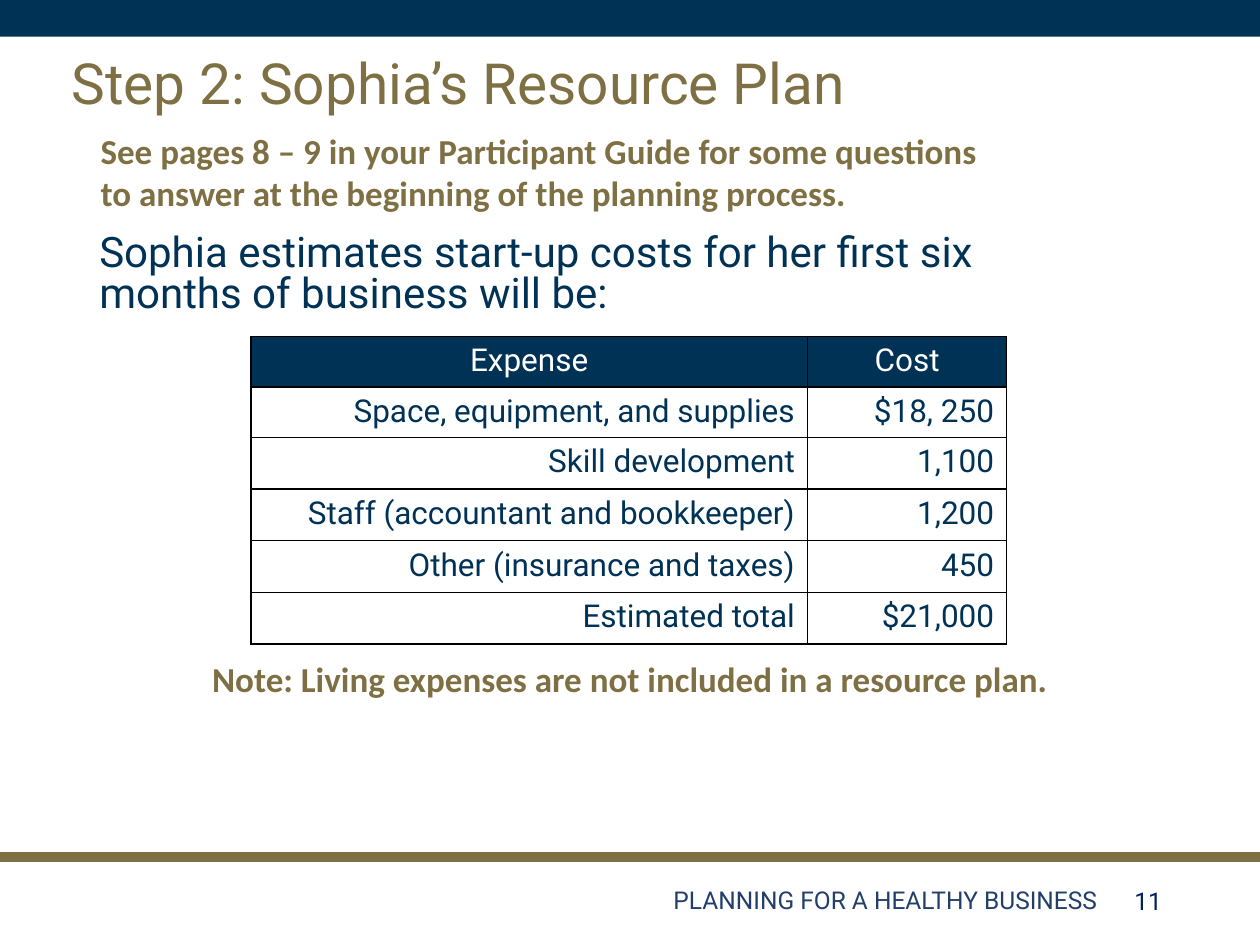
from lxml import etree
from pptx import Presentation
from pptx.dml.color import RGBColor
from pptx.enum.shapes import MSO_CONNECTOR, MSO_SHAPE
from pptx.enum.text import MSO_ANCHOR, PP_ALIGN
from pptx.oxml.ns import qn
from pptx.util import Inches, Pt

LEFT, CENTER, RIGHT = PP_ALIGN.LEFT, PP_ALIGN.CENTER, PP_ALIGN.RIGHT
TOP, MIDDLE = MSO_ANCHOR.TOP, MSO_ANCHOR.MIDDLE

COLORS = {"navy": "003256", "gold": "7F7044", "footer": "223F6B",
          "number": "002060", "white": "FFFFFF", "black": "000000"}
HEAD, NOTE = "Roboto", "Calibri"
WIDTH, HEIGHT = 10, 7.5

# text, (left, top, width, height), font, size, color, bold, align, anchor, line spacing
TEXTS = [
    ("Step 2: Sophia’s Resource Plan", (0.47, 0.38, 8.62, 0.61),
     HEAD, 32.4, "gold", False, LEFT, MIDDLE, 0.9),
    ("See pages 8 – 9 in your Participant Guide for some questions to answer "
     "at the beginning of the planning process.", (0.7, 0.98, 7.3, 0.77),
     NOTE, 20, "gold", True, LEFT, TOP, 1.0),
    ("Sophia estimates start-up costs for her first six months of business will be:",
     (0.69, 1.82, 7.23, 0.77), HEAD, 24, "navy", False, LEFT, TOP, 0.8),
    ("Note: Living expenses are not included in a resource plan.",
     (1.35, 5.17, 7.3, 0.4), NOTE, 20, "gold", True, CENTER, TOP, 1.0),
    ("PLANNING FOR A HEALTHY BUSINESS", (4.14, 6.94, 4.67, 0.4),
     HEAD, 14, "footer", False, RIGHT, MIDDLE, 1.0),
    ("11", (8.83, 6.95, 0.49, 0.4),
     HEAD, 14, "number", False, RIGHT, MIDDLE, 1.0),
]

COSTS = [
    ("Expense", "Cost"),
    ("Space, equipment, and supplies", "$18, 250"),
    ("Skill development", "1,100"),
    ("Staff (accountant and bookkeeper)", "1,200"),
    ("Other (insurance and taxes)", "450"),
    ("Estimated total", "$21,000"),
]
COST_BOX = (1.99, 2.67, 6, 2.42)
COST_COLS = (4.42, 1.58)
COST_ROWS = (0.35,) * 2 + (0.41,) * 4


def rgb(name):
    return RGBColor.from_string(COLORS[name])


def inches(box):
    return [Inches(v) for v in box]


def style(p, font, size, color, bold, align):
    p.alignment = align
    p.font.name, p.font.size, p.font.bold = font, Pt(size), bold
    p.font.color.rgb = rgb(color)


def add_text(slide, text, box, font, size, color, bold, align, anchor, spacing):
    tf = slide.shapes.add_textbox(*inches(box)).text_frame
    tf.word_wrap = True
    tf.vertical_anchor = anchor
    p = tf.paragraphs[0]
    p.text = text
    p.line_spacing = spacing
    style(p, font, size, color, bold, align)


def add_borders(cell):
    """Draw a 1 pt black line on all four sides; borders must precede the fill."""
    tcPr = cell._tc.get_or_add_tcPr()
    for i, side in enumerate(("a:lnL", "a:lnR", "a:lnT", "a:lnB")):
        ln = etree.Element(qn(side), w=str(Pt(1)))
        fill = etree.SubElement(ln, qn("a:solidFill"))
        etree.SubElement(fill, qn("a:srgbClr"), val=COLORS["black"])
        tcPr.insert(i, ln)


def add_cost_table(slide):
    table = slide.shapes.add_table(len(COSTS), len(COST_COLS), *inches(COST_BOX)).table
    table.horz_banding = table.first_row = False
    for column, width in zip(table.columns, COST_COLS):
        column.width = Inches(width)
    for r, (row, height) in enumerate(zip(COSTS, COST_ROWS)):
        table.rows[r].height = Inches(height)
        for c, text in enumerate(row):
            cell = table.cell(r, c)
            cell.text = text
            p = cell.text_frame.paragraphs[0]
            if r == 0:
                cell.fill.solid()
                cell.fill.fore_color.rgb = rgb("navy")
                style(p, HEAD, 18, "white", False, CENTER)
            else:
                cell.fill.background()
                style(p, HEAD, 18, "navy", False, RIGHT)
            add_borders(cell)


def add_bands(slide):
    sp = slide.shapes.add_shape(MSO_SHAPE.RECTANGLE, *inches((0, 0, WIDTH, 0.29)))
    sp.shadow.inherit = False
    sp.fill.solid()
    sp.fill.fore_color.rgb = rgb("navy")
    sp.line.fill.background()
    rule = slide.shapes.add_connector(MSO_CONNECTOR.STRAIGHT, *inches((0, 6.8, WIDTH, 6.8)))
    rule.line.color.rgb = rgb("gold")
    rule.line.width = Pt(6)
    etree.SubElement(rule._element.spPr, qn("a:effectLst"))


def main():
    prs = Presentation()
    prs.slide_width, prs.slide_height = inches((WIDTH, HEIGHT))
    slide = prs.slides.add_slide(prs.slide_layouts[6])
    add_bands(slide)
    for item in TEXTS:
        add_text(slide, *item)
    add_cost_table(slide)
    prs.save("out.pptx")


if __name__ == "__main__":
    main()
